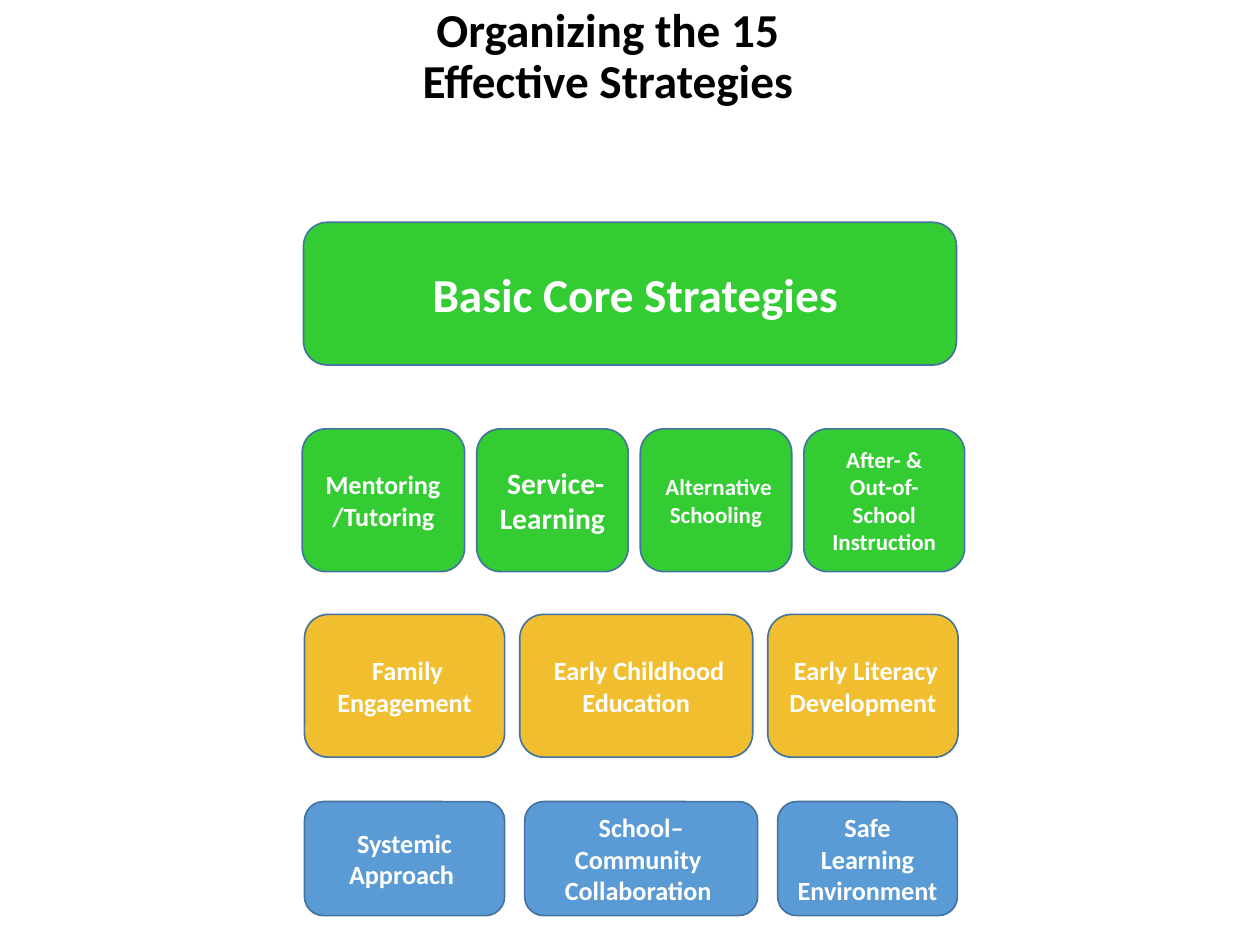
from pptx import Presentation
from pptx.dml.color import RGBColor
from pptx.enum.shapes import MSO_SHAPE
from pptx.enum.text import MSO_ANCHOR, MSO_AUTO_SIZE, PP_ALIGN
from pptx.util import Pt

ROUNDED = MSO_SHAPE.ROUNDED_RECTANGLE
MIDDLE = MSO_ANCHOR.MIDDLE
CENTER = PP_ALIGN.CENTER
NO_AUTOFIT = MSO_AUTO_SIZE.NONE
TITLE_ONLY = 5

GREEN, YELLOW, BLUE = "33CC33", "F1BE2F", "5B9BD5"


def color(hex_string):
    return RGBColor.from_string(hex_string)


class StrategySlide:
    font_name = "Calibri"
    outline = "43739E"

    def __init__(self, slide):
        self.slide = slide

    def set_text(self, frame, text, size, font_color):
        frame.text = text
        frame.word_wrap = True
        frame.auto_size = NO_AUTOFIT
        frame.vertical_anchor = MIDDLE
        for paragraph in frame.paragraphs:
            paragraph.alignment = CENTER
            paragraph.font.name = self.font_name
            paragraph.font.size = Pt(size)
            paragraph.font.bold = True
            paragraph.font.color.rgb = color(font_color)

    def title(self, text, left, top, width, height):
        heading = self.slide.shapes.title
        heading.left, heading.top = Pt(left), Pt(top)
        heading.width, heading.height = Pt(width), Pt(height)
        self.set_text(heading.text_frame, text, 28.8, "000000")
        heading.text_frame.paragraphs[0].line_spacing = 0.9

    def box(self, text, left, top, width, height, fill, size):
        strategy = self.slide.shapes.add_shape(
            ROUNDED, Pt(left), Pt(top), Pt(width), Pt(height))
        strategy.shadow.inherit = False
        strategy.fill.solid()
        strategy.fill.fore_color.rgb = color(fill)
        strategy.line.color.rgb = color(self.outline)
        strategy.line.width = Pt(1)
        self.set_text(strategy.text_frame, text, size, "FFFFFF")

    def row(self, left, top, height, gap, fill, strategies):
        """Place boxes from left to right with equal gaps."""
        for text, width, size in strategies:
            self.box(text, left, top, width, height, fill, size)
            left += width + gap


def main():
    presentation = Presentation()
    presentation.slide_width, presentation.slide_height = Pt(768), Pt(576)
    layout = presentation.slide_layouts[TITLE_ONLY]
    page = StrategySlide(presentation.slides.add_slide(layout))

    page.title("Organizing the 15 Effective Strategies", 211, 0, 319, 70.5)

    # Foundation strategies
    page.row(185.6, 488.6, 69.5, 12.2, BLUE, [
        ("Systemic Approach ", 122, 16),
        ("School– Community \nCollaboration ", 142, 16),
        ("Safe Learning Environment", 109.6, 16),
    ])

    # Early intervention
    page.row(185.6, 374.5, 87, 9.2, YELLOW, [
        (" Family Engagement", 122, 16),
        (" Early Childhood Education", 142, 16),
        (" Early Literacy Development", 116, 16),
    ])

    # Basic core heading and its strategies
    page.box(" Basic Core Strategies", 185, 135.5, 398, 87, GREEN, 28.8)
    page.row(184.2, 261.4, 87, 7.4, GREEN, [
        ("Mentoring/Tutoring", 99, 16),
        (" Service- Learning", 92.3, 18),
        (" Alternative Schooling", 92.3, 14),
        ("After- & Out-of-School Instruction", 98, 14),
    ])

    presentation.save("out.pptx")


if __name__ == "__main__":
    main()
